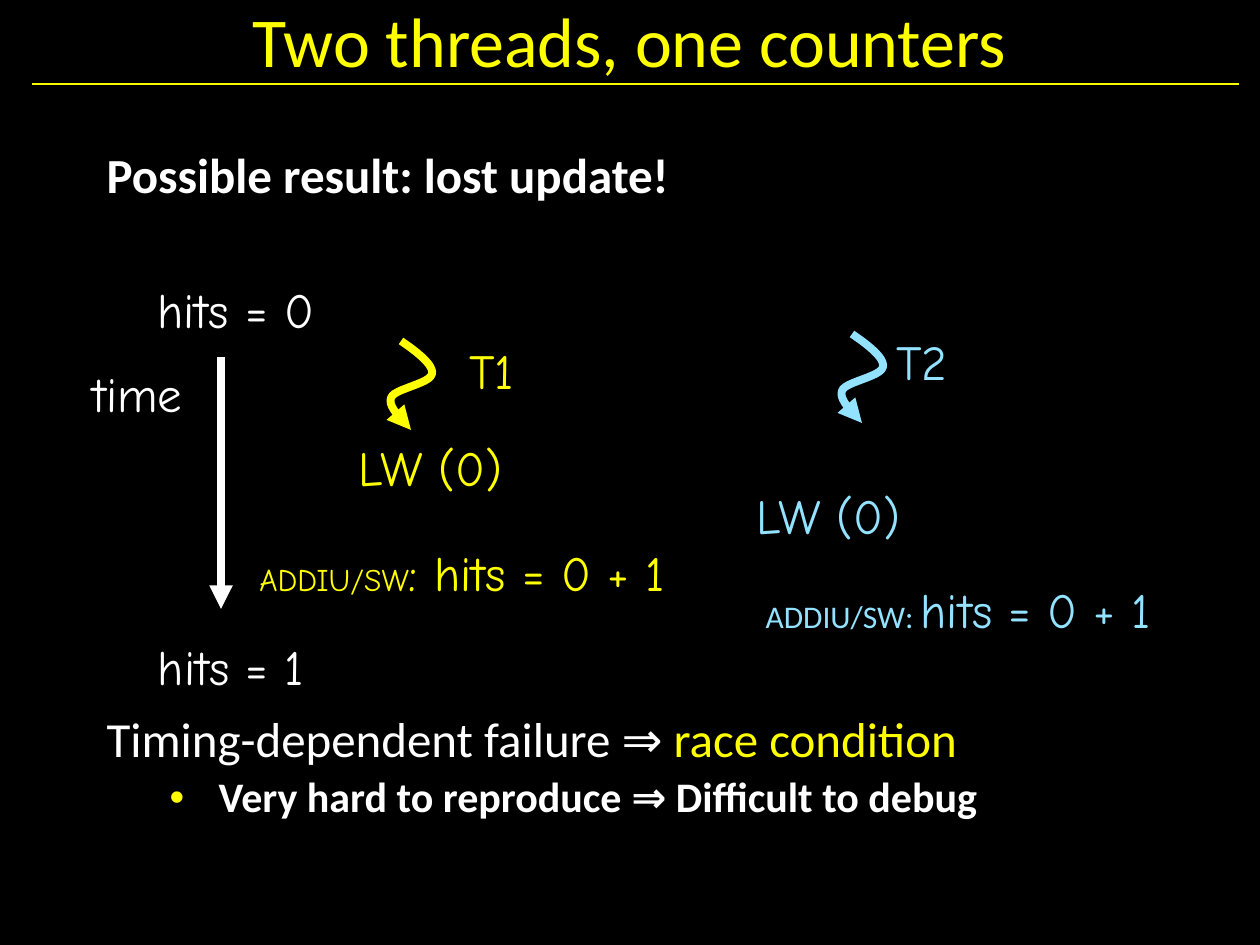
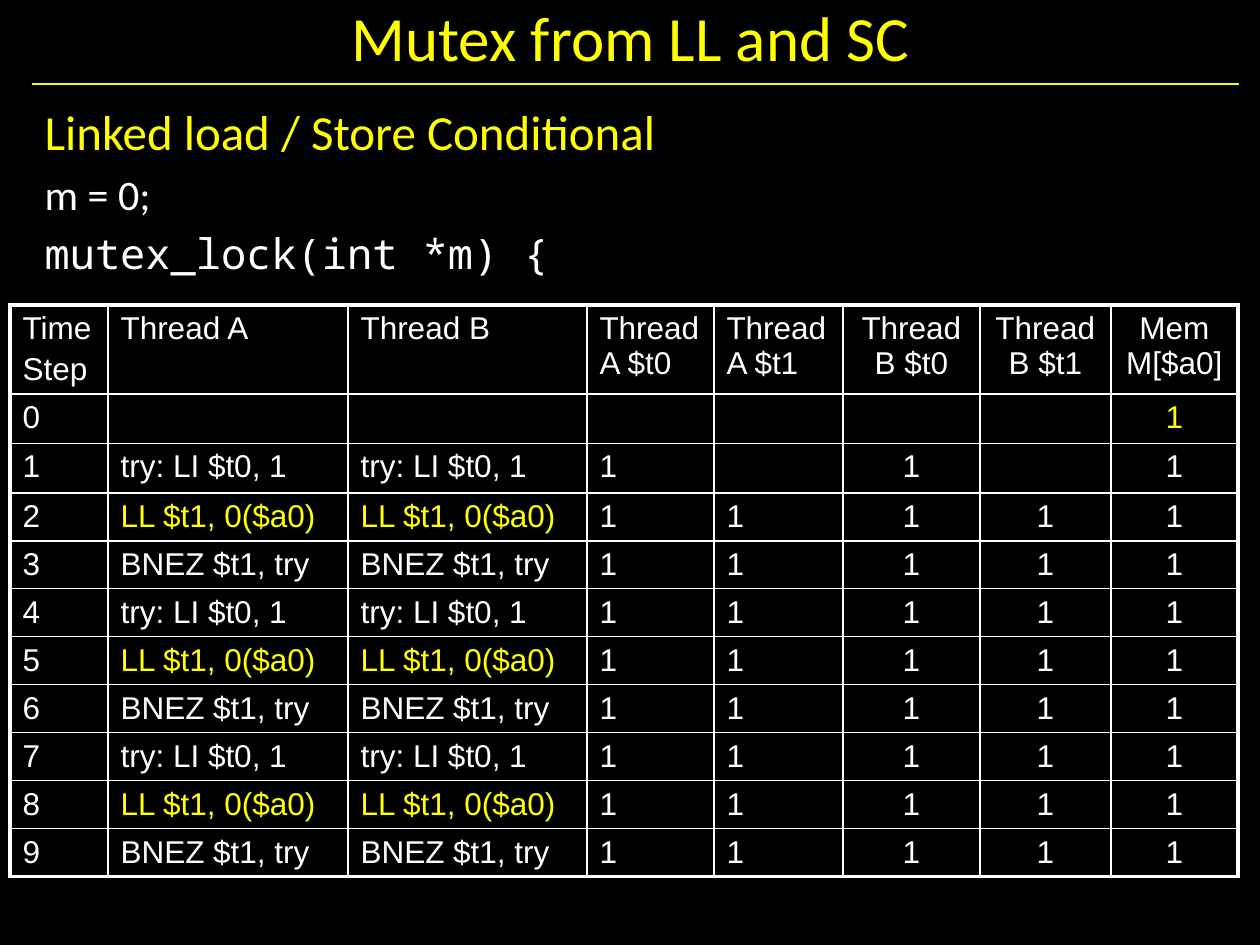
from lxml.etree import SubElement
from pptx import Presentation
from pptx.dml.color import RGBColor
from pptx.enum.shapes import MSO_CONNECTOR
from pptx.enum.text import MSO_ANCHOR, MSO_AUTO_SIZE, PP_ALIGN
from pptx.oxml.ns import qn
from pptx.util import Emu, Pt

COLORS = {
    "background": "000000",
    "rule": "F9F900",
    "accent": "FFFF00",
    "second": "93E2FF",
    "text": "FFFFFF",
}
BODY_FONT = "Calibri"
HAND_FONT = "Comic Neue"
CODE_FONT = "Noto Sans Mono"
TABLE_FONT = "Arial"

SQUIGGLE_START = (14, 0)
SQUIGGLE_CURVES = [
    ((30, 11), (47, 24), (45, 33)),
    ((43, 43), (6, 48), (4, 57)),
    ((0, 67), (20, 83), (24, 89)),
]
CURVE_STEPS = 12

COLUMN_WIDTHS = [98, 240, 239, 127, 129, 137, 131, 127]
HEADER_HEIGHT, ROW_HEIGHT = 89, 48
HEADERS = ["Time\nStep", "Thread A", "Thread B", "Thread\nA $t0", "Thread\nA $t1",
           "Thread\nB $t0", "Thread\nB $t1", "Mem M[$a0]"]
LOOP_STEPS = ["try: LI $t0, 1", "LL $t1, 0($a0)", "BNEZ $t1, try"]
FIRST_CENTERED_COLUMN = 5


def px(length):
    return Emu(round(length * 914400 / 126))


def rgb(name):
    return RGBColor.from_string(COLORS[name])


def add_text(paragraph, text, size=28, color="text", font=BODY_FONT, bold=False):
    for index, line in enumerate(text.split("\n")):
        if index:
            paragraph.add_line_break()
        run = paragraph.add_run()
        run.text = line
        run.font.size = Pt(size)
        run.font.name = font
        run.font.bold = bold
        run.font.color.rgb = rgb(color)


def place(shape, box):
    shape.left, shape.top, shape.width, shape.height = map(px, box)


def style_line(shape, color, width, arrow=False):
    shape.line.color.rgb = rgb(color)
    shape.line.width = Pt(width)
    if arrow:
        SubElement(shape.line._get_or_add_ln(), qn("a:tailEnd"), type="triangle")


def add_line(slide, start, end, color, width, arrow=False):
    line = slide.shapes.add_connector(MSO_CONNECTOR.STRAIGHT, *map(px, (*start, *end)))
    style_line(line, color, width, arrow)
    SubElement(line._element.spPr, qn("a:effectLst"))


def add_slide(presentation, title, title_box, title_size, body_box):
    slide = presentation.slides.add_slide(presentation.slide_layouts[1])
    slide.background.fill.solid()
    slide.background.fill.fore_color.rgb = rgb("background")
    add_line(slide, (32, 84), (1239, 84), "rule", 0.75)
    heading, body = slide.placeholders
    place(heading, title_box)
    place(body, body_box)
    for placeholder in (heading, body):
        placeholder.text_frame.auto_size = MSO_AUTO_SIZE.NONE
    heading.text_frame.vertical_anchor = MSO_ANCHOR.MIDDLE
    paragraph = heading.text_frame.paragraphs[0]
    paragraph.alignment = PP_ALIGN.CENTER
    add_text(paragraph, title, size=title_size, color="accent")
    return slide, body.text_frame


def next_paragraph(frame):
    first = frame.paragraphs[0]
    return frame.add_paragraph() if first.runs else first


def add_body_line(frame, text, bullet=False, spacing=None, **text_format):
    paragraph = next_paragraph(frame)
    if spacing:
        paragraph.line_spacing = spacing
    properties = paragraph._p.get_or_add_pPr()
    margin, indent = (px(112), px(-49)) if bullet else (0, 0)
    properties.set("marL", str(margin))
    properties.set("indent", str(indent))
    if bullet:
        paragraph.level = 1
        bullet_color = SubElement(properties, qn("a:buClr"))
        SubElement(bullet_color, qn("a:srgbClr"), val=COLORS["accent"])
        SubElement(properties, qn("a:buFont"), typeface=TABLE_FONT)
        SubElement(properties, qn("a:buChar"), char="•")
    else:
        SubElement(properties, qn("a:buNone"))
    add_text(paragraph, text, **text_format)
    return paragraph


def add_label(slide, box, *runs, color="text"):
    label = slide.shapes.add_textbox(*map(px, box))
    frame = label.text_frame
    frame.word_wrap = False
    frame.auto_size = MSO_AUTO_SIZE.SHAPE_TO_FIT_TEXT
    frame.vertical_anchor = MSO_ANCHOR.MIDDLE
    paragraph = frame.paragraphs[0]
    paragraph.alignment = PP_ALIGN.CENTER
    for text, size, font in runs:
        add_text(paragraph, text, size=size, font=font, color=color)


def bezier_point(points, t):
    weights = ((1 - t) ** 3, 3 * t * (1 - t) ** 2, 3 * t ** 2 * (1 - t), t ** 3)
    return tuple(sum(w * p[axis] for w, p in zip(weights, points)) for axis in (0, 1))


def add_squiggle(slide, left, top, color):
    points = [SQUIGGLE_START]
    for curve in SQUIGGLE_CURVES:
        controls = (points[-1], *curve)
        points += [bezier_point(controls, step / CURVE_STEPS)
                   for step in range(1, CURVE_STEPS + 1)]
    outline = [(px(left + x), px(top + y)) for x, y in points]
    builder = slide.shapes.build_freeform(*outline[0])
    builder.add_line_segments(outline[1:], close=False)
    squiggle = builder.convert_to_shape()
    squiggle.shadow.inherit = False
    squiggle.fill.background()
    style_line(squiggle, color, 4.5, arrow=True)


def add_timeline(slide, left, top):
    for text, x, y, width in [("hits = 0", 63, 0, 199), ("time", 0, 84, 129),
                              ("hits = 1", 63, 357, 190)]:
        add_label(slide, (left + x, top + y, width, 72), (text, 28, HAND_FONT))
    add_line(slide, (left + 148, top + 84), (left + 148, top + 336), "text", 4.5, arrow=True)


def add_thread(slide, left, top, color, name_box, load_box, store_box, store_runs):
    add_squiggle(slide, left, top, color)
    labels = [
        (name_box, [("T1" if color == "accent" else "T2", 28, HAND_FONT)]),
        (load_box, [("LW (0)", 28, HAND_FONT)]),
        (store_box, store_runs),
    ]
    for (x, y, width), runs in labels:
        add_label(slide, (left + x, top + y, width, 72), *runs, color=color)


def build_lost_update(presentation):
    slide, body = add_slide(presentation, "Two threads, one counters",
                            (94, -10, 1071, 100), 40, (94, 145, 1071, 757))
    add_body_line(body, "Possible result: lost update!", spacing=0.9, bold=True)
    failure = add_body_line(body, "Timing-dependent failure ⇒ ", spacing=0.9)
    failure.space_before = Pt(292)
    add_text(failure, "race condition", color="accent")
    add_body_line(body, "Very hard to reproduce ⇒ Difficult to debug",
                  bullet=True, spacing=0.9, size=24, bold=True)
    add_timeline(slide, 73, 273)
    add_thread(slide, 387, 341, "accent", (64, -7, 81), (-49, 90, 185), (-169, 195, 488),
               [("ADDIU/SW", 18, HAND_FONT), (": hits = 0 + 1", 28, HAND_FONT)])
    add_thread(slide, 838, 334, "second", (40, -9, 88), (-102, 145, 185), (-100, 239, 441),
               [("ADDIU/SW: ", 18, BODY_FONT), ("hits = 0 + 1", 28, HAND_FONT)])


def set_borders(cell, **widths):
    properties = cell._tc.get_or_add_tcPr()
    for side in "LRTB":
        line = SubElement(properties, qn(f"a:ln{side}"), w=str(Pt(widths[side])))
        fill = SubElement(line, qn("a:solidFill"))
        SubElement(fill, qn("a:srgbClr"), val=COLORS["text"])


def trace_rows():
    rows = [HEADERS, ["0"] + [""] * 6 + ["1"]]
    for step in range(1, 10):
        instruction = LOOP_STEPS[(step - 1) % len(LOOP_STEPS)]
        loaded = "1" if step > 1 else ""
        rows.append([str(step), instruction, instruction, "1", loaded, "1", loaded, "1"])
    return rows


def fill_cell(cell, text, column, color):
    cell.margin_top, cell.margin_bottom = px(6), px(5)
    lines = text.split("\n") if column == 0 else [text]
    for line in lines:
        paragraph = next_paragraph(cell.text_frame)
        if column >= FIRST_CENTERED_COLUMN:
            paragraph.alignment = PP_ALIGN.CENTER
        if line:
            paragraph.space_before = Pt(3) if line == "Step" else Pt(0)
            add_text(paragraph, line, size=18, color=color, font=TABLE_FONT)


def add_trace_table(slide, left, top):
    rows = trace_rows()
    heights = [HEADER_HEIGHT] + [ROW_HEIGHT] * (len(rows) - 1)
    box = (left, top, sum(COLUMN_WIDTHS), sum(heights))
    table = slide.shapes.add_table(len(rows), len(COLUMN_WIDTHS), *map(px, box)).table
    table.first_row = table.horz_banding = False
    for column, width in zip(table.columns, COLUMN_WIDTHS):
        column.width = px(width)
    for row, height in zip(table.rows, heights):
        row.height = px(height)
    last_row, last_column = len(rows) - 1, len(COLUMN_WIDTHS) - 1
    for r, row in enumerate(rows):
        for c, text in enumerate(row):
            cell = table.cell(r, c)
            highlighted = text == LOOP_STEPS[1] or (r, c) == (1, last_column)
            fill_cell(cell, text, c, "accent" if highlighted else "text")
            edges = {"L": c == 0, "R": c == last_column, "T": r == 0, "B": r == last_row}
            set_borders(cell, **{side: 2.25 if outer else 1 for side, outer in edges.items()})
            cell.fill.background()


def build_mutex(presentation):
    slide, body = add_slide(presentation, "Mutex from LL and SC",
                            (32, 0, 1197, 73), 36, (32, 95, 1197, 777))
    add_body_line(body, "Linked load / Store Conditional", color="accent")
    add_body_line(body, "m = 0;", size=24)
    add_body_line(body, "mutex_lock(int *m) {", size=24, font=CODE_FONT)
    add_trace_table(slide, 10, 305)


def main():
    presentation = Presentation()
    presentation.slide_width, presentation.slide_height = px(1260), px(945)
    build_lost_update(presentation)
    build_mutex(presentation)
    presentation.save("out.pptx")


if __name__ == "__main__":
    main()
